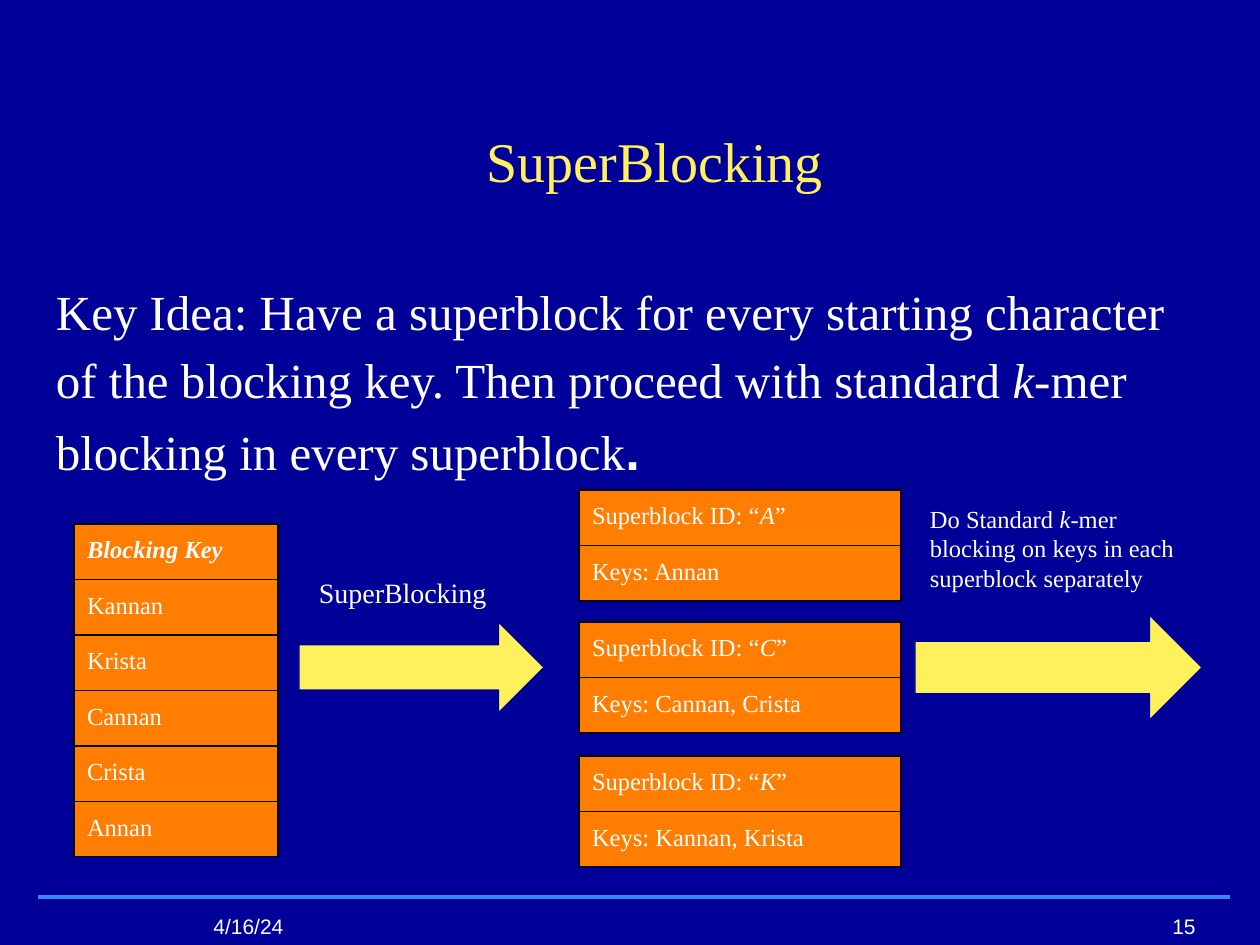
"""Build the SuperBlocking slide: key table, superblock tables and flow arrows."""
from lxml import etree
from pptx import Presentation
from pptx import util as u
from pptx.dml.color import RGBColor
from pptx.enum import shapes, text
from pptx.oxml import ns

PX = 914400 // 126
NAVY = RGBColor(0x00, 0x00, 0x99)
YELLOW = RGBColor(0xFF, 0xF1, 0x5B)
ORANGE = RGBColor(0xFF, 0x7D, 0x00)
WHITE = RGBColor(0xFF, 0xFF, 0xFF)
BLUE = RGBColor(0x35, 0x87, 0xF5)
SERIF, SANS = "Times New Roman", "Arial"
INSET = 13

deck = Presentation()
deck.slide_width, deck.slide_height = 1260 * PX, 945 * PX
slide = deck.slides.add_slide(deck.slide_layouts[6])
slide.background.fill.solid()
slide.background.fill.fore_color.rgb = NAVY


def write(paragraph, pieces, size, color=WHITE, font=SERIF):
    for wording, style in pieces:
        run = paragraph.add_run()
        run.text = wording
        run.font.size, run.font.name = u.Pt(size), font
        run.font.color.rgb = color
        run.font.bold, run.font.italic = "b" in style, "i" in style
    return paragraph


def add_blocks(left, top, width, heights, rows):
    frame = slide.shapes.add_table(
        len(rows), 1, left * PX, top * PX, width * PX, sum(heights) * PX)
    blocks = frame.table
    blocks.first_row = blocks.horz_banding = False
    for index, (height, pieces) in enumerate(zip(heights, rows)):
        blocks.rows[index].height = height * PX
        cell = blocks.cell(index, 0)
        cell.margin_left = cell.margin_right = INSET * PX
        cell.margin_top = cell.margin_bottom = INSET * PX
        write(cell.text_frame.paragraphs[0], pieces, 14)
        properties = cell._tc.get_or_add_tcPr()
        for side in ("a:lnL", "a:lnR", "a:lnT", "a:lnB"):
            border = etree.SubElement(properties, ns.qn(side), w="12700")
            ink = etree.SubElement(border, ns.qn("a:solidFill"))
            etree.SubElement(ink, ns.qn("a:srgbClr"), val="000000")
        cell.fill.solid()
        cell.fill.fore_color.rgb = ORANGE


footer_rule = slide.shapes.add_connector(
    shapes.MSO_CONNECTOR.STRAIGHT, 38 * PX, 897 * PX, 1230 * PX, 897 * PX)
footer_rule.line.color.rgb = BLUE
footer_rule.line.width = u.Pt(2.25)
etree.SubElement(footer_rule._element.spPr, ns.qn("a:effectLst"))

for left, width, wording in ((201, 118, "4/16/24"), (1160, 50, "15")):
    footer = slide.shapes.add_textbox(left * PX, 907 * PX, width * PX, 38 * PX)
    footer.text_frame.word_wrap = False
    write(footer.text_frame.paragraphs[0], [(wording, "")], 12, font=SANS)

key_idea = [
    ("Key Idea: Have a superblock for every starting character of the "
     "blocking key. Then proceed with standard ", ""),
    ("k", "i"), ("-mer blocking in every superblock", "")]
next_step = [
    ("Do Standard ", ""), ("k", "i"),
    ("-mer blocking on keys in each superblock separately", "")]
paragraphs = []
for left, top, width, height, pieces, size, color in (
        (68, 114, 1174, 79, [("SuperBlocking", "")], 32, YELLOW),
        (43, 260, 1162, 622, key_idea, 28, WHITE),
        (306, 563, 215, 67, [("SuperBlocking", "")], 16, WHITE),
        (917, 491, 305, 113, next_step, 14, WHITE)):
    box = slide.shapes.add_textbox(left * PX, top * PX, width * PX, height * PX)
    frame = box.text_frame
    frame.word_wrap = True
    frame.margin_left = frame.margin_right = INSET * PX
    frame.margin_top = frame.margin_bottom = INSET * PX
    paragraphs.append(write(frame.paragraphs[0], pieces, size, color))
title, idea = paragraphs[:2]
title.alignment = text.PP_ALIGN.CENTER
idea.line_spacing = 1.15
write(idea, [(".", "b")], 30, font=SANS)

names = ("Kannan", "Krista", "Cannan", "Crista", "Annan")
add_blocks(74, 524, 204, [54] + [52] * len(names),
           [[("Blocking Key", "bi")]] + [[(name, "")] for name in names])

for top, letter in ((490, "A"), (622, "C"), (756, "K")):
    members = ", ".join(name for name in names if name.startswith(letter))
    add_blocks(579, top, 322, [52, 52], [
        [("Superblock ID: “", ""), (letter, "i"), ("”", "")],
        [("Keys: " + members, "")]])

for left, top, width, height in ((299, 622, 245, 91), (915, 615, 287, 105)):
    arrow = slide.shapes.add_shape(
        shapes.MSO_SHAPE.RIGHT_ARROW, left * PX, top * PX, width * PX, height * PX)
    arrow.shadow.inherit = False
    arrow.fill.solid()
    arrow.fill.fore_color.rgb = YELLOW
    arrow.line.color.rgb = NAVY
    arrow.line.width = u.Pt(0.75)

deck.save("out.pptx")
